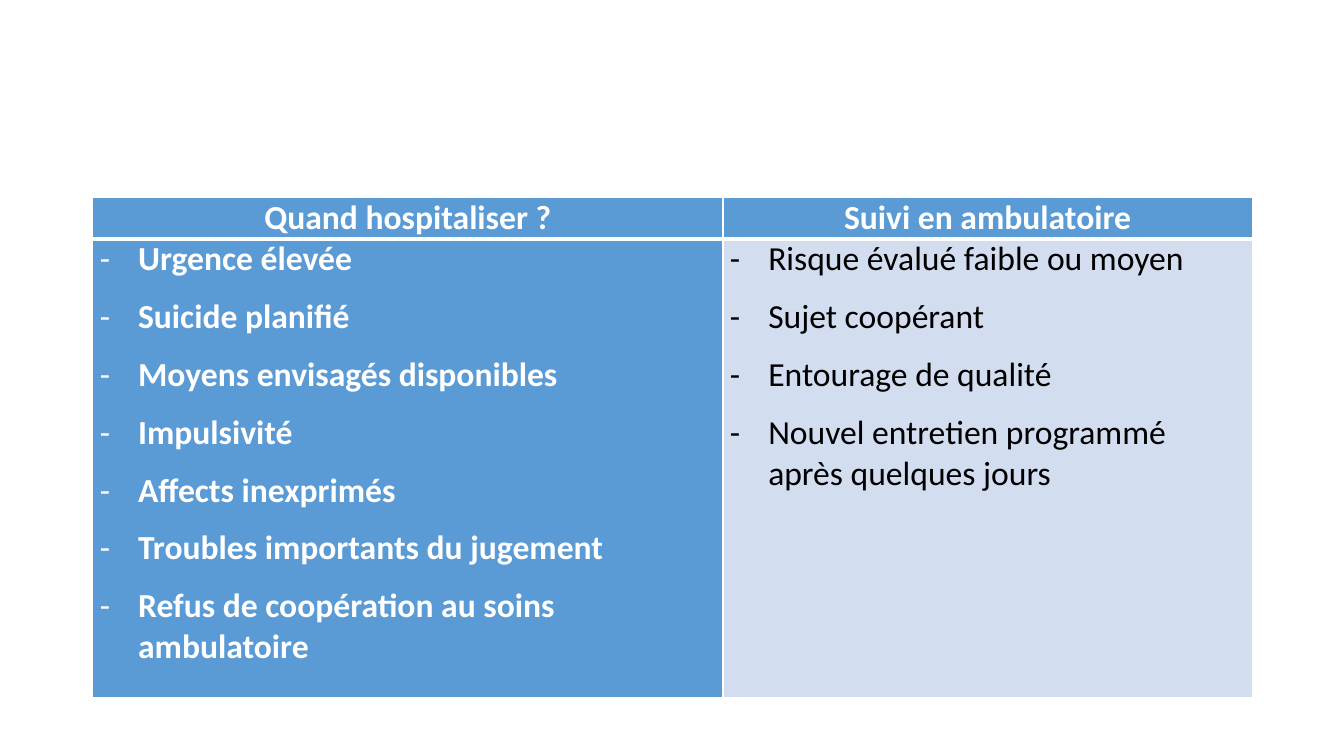
"""Build the slide comparing hospital admission with outpatient follow-up."""
from dataclasses import dataclass

from lxml.etree import SubElement
from pptx import Presentation
from pptx.dml.color import RGBColor
from pptx.enum.text import PP_ALIGN
from pptx.oxml.ns import qn
from pptx.util import Inches, Pt

WHITE, BLACK, BLUE, PALE_BLUE = "FFFFFF", "000000", "5B9BD5", "D2DEEF"
ROW_HEIGHTS = (0.41, 4.55)
THIN, THICK = 1, 3
CELL_FORMAT = {
    "margin_left": Inches(0.07),
    "margin_right": Inches(0.07),
    "margin_top": 0,
    "margin_bottom": 0,
}
PARAGRAPH_FORMAT = {"space_before": Pt(6), "space_after": Pt(6)}
FONT_FORMAT = {"name": "Calibri", "size": Pt(24)}


@dataclass(frozen=True)
class CareOption:
    heading: str
    criteria: tuple[str, ...]
    width: float
    fill: str
    ink: str
    bold: bool


CARE_OPTIONS = (
    CareOption(
        "Quand hospitaliser ?",
        (
            "Urgence élevée",
            "Suicide planifié",
            "Moyens envisagés disponibles",
            "Impulsivité",
            "Affects inexprimés",
            "Troubles importants du jugement",
            "Refus de coopération au soins ambulatoire",
        ),
        6.25, BLUE, WHITE, True,
    ),
    CareOption(
        "Suivi en ambulatoire",
        (
            "Risque évalué faible ou moyen",
            "Sujet coopérant",
            "Entourage de qualité",
            "Nouvel entretien programmé après quelques jours",
        ),
        5.25, PALE_BLUE, BLACK, False,
    ),
)


def color(value: str) -> RGBColor:
    """Turn a hex string into a colour."""
    return RGBColor.from_string(value)


def apply_format(target: object, values: dict) -> None:
    """Set each named attribute on the target."""
    for name, value in values.items():
        setattr(target, name, value)


def add_borders(cell, top: int, bottom: int) -> None:
    """Draw white borders with the given top and bottom widths."""
    properties = cell._tc.get_or_add_tcPr()
    for side, width in {"L": THIN, "R": THIN, "T": top, "B": bottom}.items():
        border = SubElement(properties, qn(f"a:ln{side}"), w=str(Pt(width)))
        SubElement(SubElement(border, qn("a:solidFill")), qn("a:srgbClr"), val=WHITE)


def set_hanging_indent(paragraph, indent: float, bullet: str = "") -> None:
    """Hang the first line by the indent, with an optional bullet."""
    properties = paragraph._p.get_or_add_pPr()
    properties.set("marL", str(Inches(indent)))
    properties.set("indent", str(-Inches(indent)))
    if bullet:
        SubElement(properties, qn("a:buFont"), typeface=FONT_FORMAT["name"])
        SubElement(properties, qn("a:buChar"), char=bullet)


def fill_cell(cell, lines: tuple[str, ...], fill: str, ink: str, bold: bool,
              is_heading: bool) -> None:
    """Write a heading or a dashed list into a coloured cell."""
    apply_format(cell, CELL_FORMAT)
    add_borders(cell, *((THIN, THICK) if is_heading else (THICK, THIN)))
    cell.fill.solid()
    cell.fill.fore_color.rgb = color(fill)
    cell.text = "\n".join(lines)
    for paragraph in cell.text_frame.paragraphs:
        apply_format(paragraph, PARAGRAPH_FORMAT)
        if is_heading:
            paragraph.alignment = PP_ALIGN.CENTER
            set_hanging_indent(paragraph, 0.5)
        else:
            set_hanging_indent(paragraph, 0.38, "-")
        font = paragraph.runs[0].font
        apply_format(font, FONT_FORMAT | {"bold": bold})
        font.color.rgb = color(ink)


def main() -> None:
    """Create the presentation and save it."""
    presentation = Presentation()
    presentation.slide_width = Inches(13.33)
    presentation.slide_height = Inches(7.5)
    slide = presentation.slides.add_slide(presentation.slide_layouts[6])
    care_table = slide.shapes.add_table(
        len(ROW_HEIGHTS), len(CARE_OPTIONS), Inches(0.92), Inches(1.96),
        Inches(sum(option.width for option in CARE_OPTIONS)),
        Inches(sum(ROW_HEIGHTS)),
    ).table
    apply_format(care_table, {"first_row": False, "horz_banding": False})
    for row, height in zip(care_table.rows, ROW_HEIGHTS):
        row.height = Inches(height)
    for index, option in enumerate(CARE_OPTIONS):
        care_table.columns[index].width = Inches(option.width)
        fill_cell(care_table.cell(0, index), (option.heading,), BLUE, WHITE, True, True)
        fill_cell(care_table.cell(1, index), option.criteria, option.fill,
                  option.ink, option.bold, False)
    presentation.save("out.pptx")


if __name__ == "__main__":
    main()
